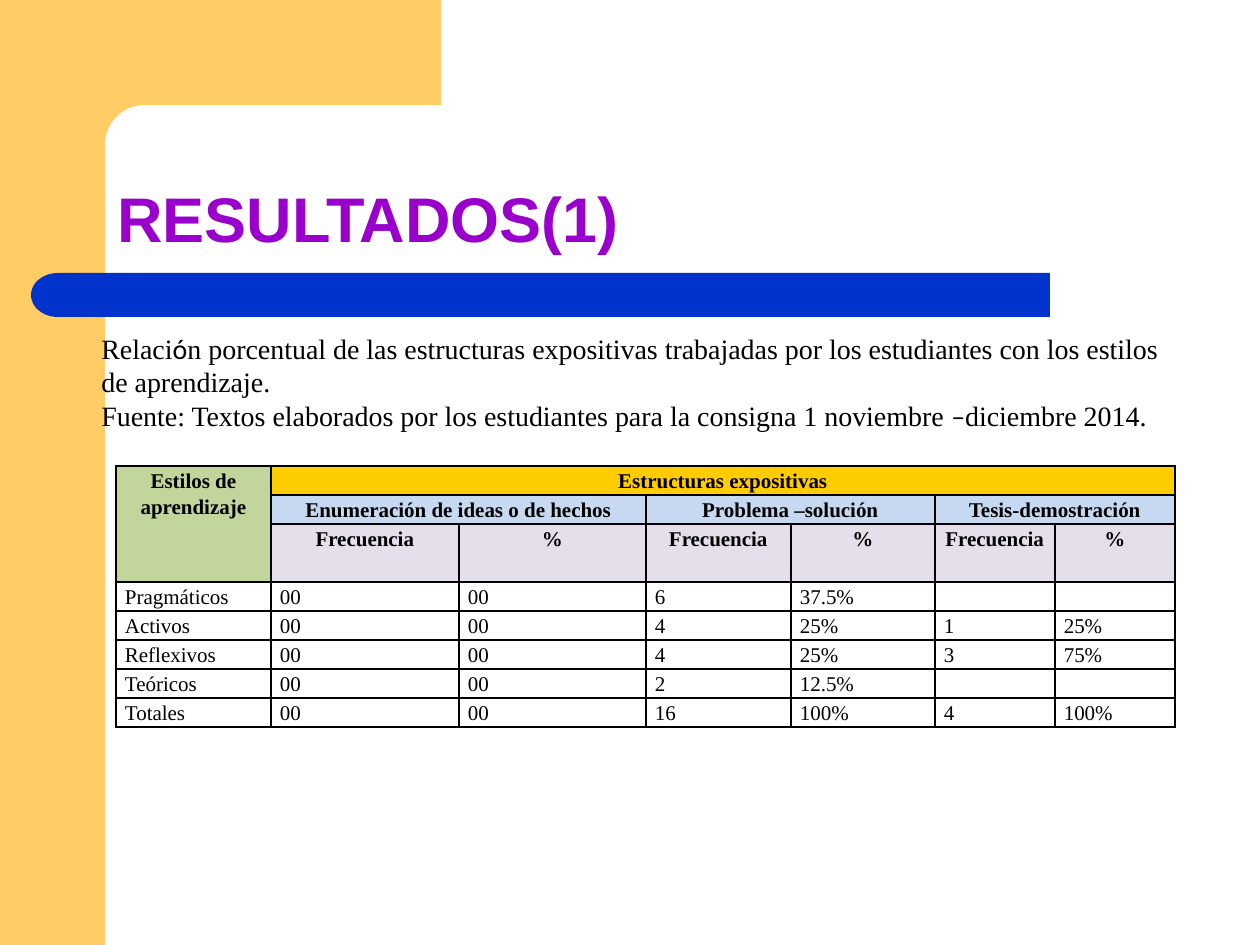
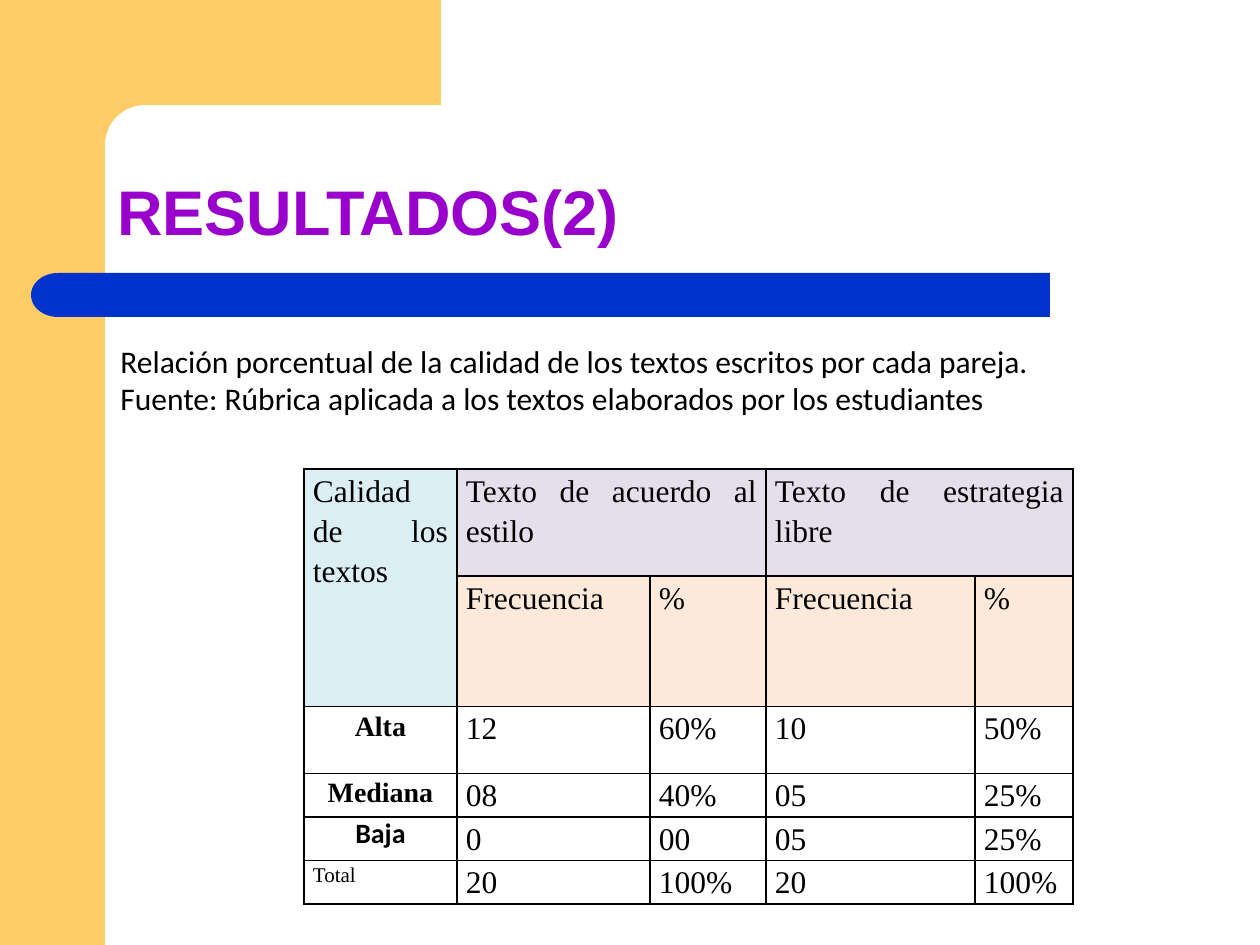
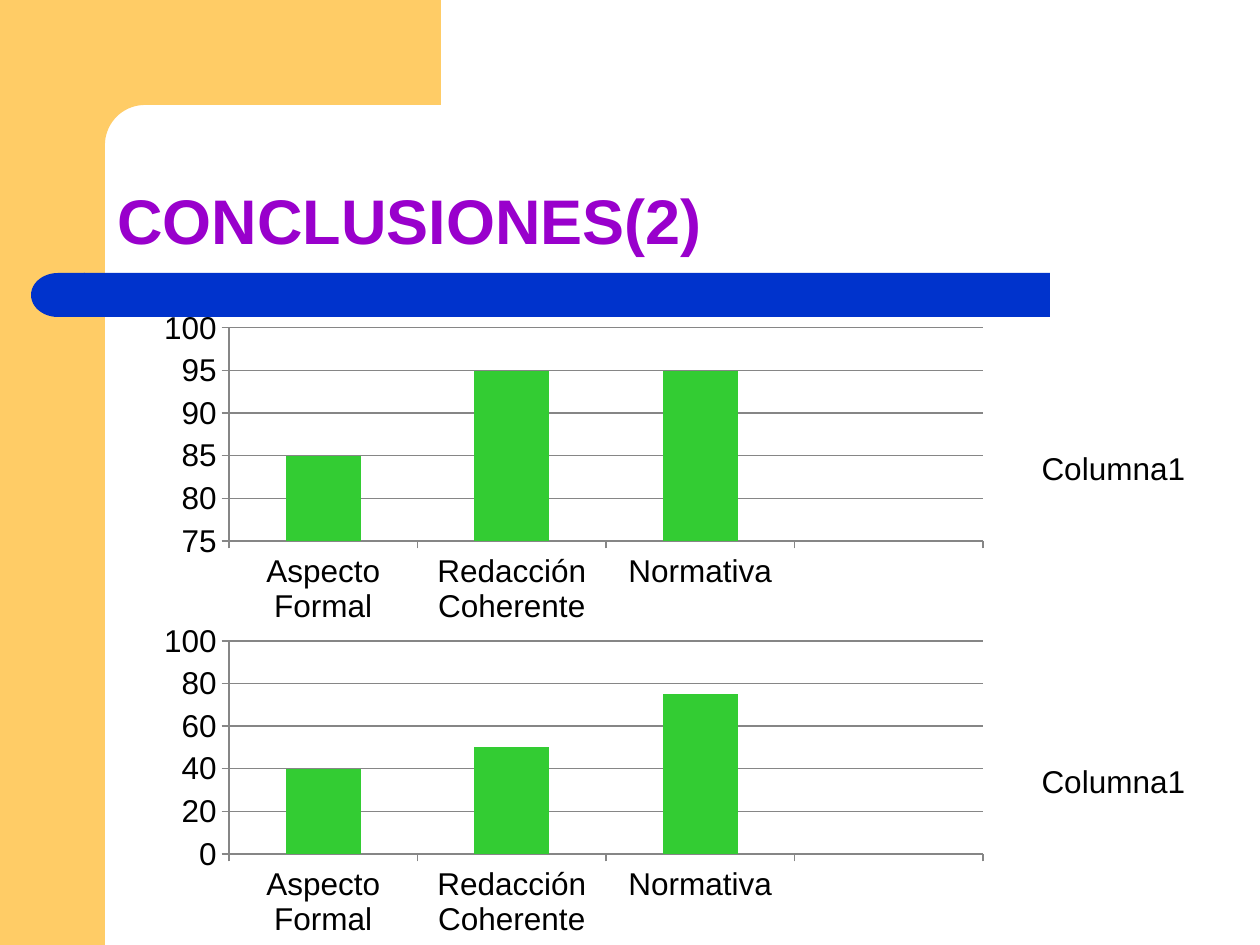
"""Builds three slides of study results: two tables and a pair of column charts."""
import math

import lxml.etree
import pptx
import pptx.chart.data
import pptx.dml.color
import pptx.enum.chart
import pptx.enum.shapes
import pptx.enum.text
import pptx.oxml.ns
import pptx.util

RGBColor = pptx.dml.color.RGBColor
ALIGN = pptx.enum.text.PP_ALIGN
ANCHOR = pptx.enum.text.MSO_ANCHOR
SHAPE = pptx.enum.shapes.MSO_SHAPE

EMU_PER_PX = 914400 / 126
SLIDE_WIDTH, SLIDE_HEIGHT = 1260, 945

SAND = RGBColor(0xFF, 0xCC, 0x66)
BLUE = RGBColor(0x00, 0x33, 0xCC)
PURPLE = RGBColor(0x99, 0x00, 0xCC)
BLACK = RGBColor(0x00, 0x00, 0x00)
WHITE = RGBColor(0xFF, 0xFF, 0xFF)
GRAY = RGBColor(0x86, 0x86, 0x86)
GREEN = RGBColor(0x33, 0xCC, 0x33)
OLIVE = RGBColor(0xC2, 0xD6, 0x9B)
GOLD = RGBColor(0xFF, 0xCC, 0x00)
SKY = RGBColor(0xC6, 0xD9, 0xF1)
LILAC = RGBColor(0xE5, 0xDF, 0xEC)
AQUA = RGBColor(0xDA, 0xEE, 0xF3)
PEACH = RGBColor(0xFD, 0xE9, 0xD9)

SERIF, SANS, TITLE_FONT = "Times New Roman", "Calibri", "Arial"


def px(length):
    return pptx.util.Emu(round(length * EMU_PER_PX))


def box(*lengths):
    return [px(length) for length in lengths]


def paint(shape, color):
    shape.shadow.inherit = False
    shape.fill.solid()
    shape.fill.fore_color.rgb = color
    shape.line.fill.background()


def style_font(font, size, name, color=BLACK, bold=False):
    font.size = pptx.util.Pt(size)
    font.name = name
    font.color.rgb = color
    font.bold = bold


def add_block(slide, kind, color, *place):
    shape = slide.shapes.add_shape(kind, *box(*place))
    paint(shape, color)
    return shape


def add_corner(slide):
    center, radius = 145, 40
    arc = [
        (center - radius * math.sin(math.radians(angle)),
         center - radius * math.cos(math.radians(angle)))
        for angle in range(0, 91, 5)
    ]
    outline = [(441, 105), *arc, (105, 161), (63, 161), (63, 0)]
    builder = slide.shapes.build_freeform(px(441), 0)
    builder.add_line_segments([(px(x), px(y)) for x, y in outline], close=True)
    paint(builder.convert_to_shape(), SAND)


def add_title(slide, text, top):
    title = slide.shapes.add_textbox(*box(105, top, 1092, 158))
    frame = title.text_frame
    frame.word_wrap = True
    frame.vertical_anchor = ANCHOR.BOTTOM
    paragraph = frame.paragraphs[0]
    paragraph.text = text
    paragraph.line_spacing = 0.9
    style_font(paragraph.font, 36, TITLE_FONT, PURPLE, True)


def add_themed_slide(presentation, title, title_top):
    slide = presentation.slides.add_slide(presentation.slide_layouts[6])
    add_block(slide, SHAPE.RECTANGLE, SAND, 0, 0, 105, SLIDE_HEIGHT)
    add_corner(slide)
    add_block(slide, SHAPE.RECTANGLE, BLUE, 84, 273, 966, 44)
    cap = add_block(slide, SHAPE.FLOWCHART_DELAY, BLUE, 31, 273, 54, 44)
    cap.element.spPr.xfrm.set("flipH", "1")
    add_title(slide, title, title_top)
    return slide


def add_caption(slide, place, size, lines):
    frame = slide.shapes.add_textbox(*box(*place)).text_frame
    frame.word_wrap = True
    frame.vertical_anchor = ANCHOR.MIDDLE
    for index, runs in enumerate(lines):
        paragraph = frame.add_paragraph() if index else frame.paragraphs[0]
        paragraph.alignment = ALIGN.JUSTIFY
        for text, font_name in runs:
            run = paragraph.add_run()
            run.text = text
            style_font(run.font, size, font_name)


def add_cell_borders(cell):
    properties = cell._tc.get_or_add_tcPr()
    for position, side in enumerate(("a:lnL", "a:lnR", "a:lnT", "a:lnB")):
        line = lxml.etree.Element(pptx.oxml.ns.qn(side), w="12700")
        fill = lxml.etree.SubElement(line, pptx.oxml.ns.qn("a:solidFill"))
        lxml.etree.SubElement(fill, pptx.oxml.ns.qn("a:srgbClr"), val=str(BLACK))
        properties.insert(position, line)


def style_cell(cell, size, font_name=SERIF, bold=False, align=ALIGN.JUSTIFY, spacing=1.15):
    paragraph = cell.text_frame.paragraphs[0]
    paragraph.alignment = align
    paragraph.line_spacing = spacing
    style_font(paragraph.font, size, font_name, BLACK, bold)
    if not paragraph.runs:
        paragraph._p.get_or_add_endParaRPr().set("sz", str(size * 100))


def add_grid(slide, left, top, widths, heights, size, headers, header_style, body):
    """Header entries are (row, column, row span, column span, text, fill)."""
    table = slide.shapes.add_table(
        len(heights), len(widths), *box(left, top, sum(widths), sum(heights))
    ).table
    table.first_row = table.horz_banding = False
    for column, width in zip(table.columns, widths):
        column.width = px(width)
    for row, height in zip(table.rows, heights):
        row.height = px(height)
    first_body_row = len(heights) - len(body)
    for row, values in enumerate(body, first_body_row):
        for column, value in enumerate(values):
            if value:
                table.cell(row, column).text = value
    for cell in table.iter_cells():
        cell.margin_left = cell.margin_right = px(9)
        cell.margin_top = cell.margin_bottom = 0
        cell.fill.background()
        add_cell_borders(cell)
        style_cell(cell, size)
    for row, column, row_span, column_span, text, color in headers:
        cell = table.cell(row, column)
        if row_span * column_span > 1:
            cell.merge(table.cell(row + row_span - 1, column + column_span - 1))
        cell.text = text
        cell.fill.solid()
        cell.fill.fore_color.rgb = color
        style_cell(cell, size, **header_style)
    return table


def chart_element(parent, tag, value):
    return lxml.etree.SubElement(parent, pptx.oxml.ns.qn(tag), val=str(value))


def place_plot(chart, **fractions):
    plot_area = chart.element.chart.plotArea
    for layout in plot_area.findall(pptx.oxml.ns.qn("c:layout")):
        plot_area.remove(layout)
    layout = lxml.etree.Element(pptx.oxml.ns.qn("c:layout"))
    manual = lxml.etree.SubElement(layout, pptx.oxml.ns.qn("c:manualLayout"))
    chart_element(manual, "c:layoutTarget", "inner")
    chart_element(manual, "c:xMode", "edge")
    chart_element(manual, "c:yMode", "edge")
    for name, fraction in fractions.items():
        chart_element(manual, f"c:{name}", fraction)
    plot_area.insert(0, layout)


def hide_legend_entries(legend, indexes):
    for position, index in enumerate(indexes, 1):
        entry = lxml.etree.Element(pptx.oxml.ns.qn("c:legendEntry"))
        chart_element(entry, "c:idx", index)
        chart_element(entry, "c:delete", 1)
        legend._element.insert(position, entry)


def add_score_chart(slide, top, scores, minimum, step):
    data = pptx.chart.data.CategoryChartData()
    data.categories = ["Aspecto Formal", "Redacción Coherente", "Normativa", ""]
    empty = [None] * 4
    data.add_series("Series 1", [*scores, None])
    data.add_series("Series 2", empty)
    data.add_series("Columna1", empty)
    chart = slide.shapes.add_chart(
        pptx.enum.chart.XL_CHART_TYPE.COLUMN_STACKED, *box(144, top, 1062, 328), data
    ).chart
    style_font(chart.font, 18, TITLE_FONT)
    chart.has_title = False
    plot = chart.plots[0]
    plot.vary_by_categories = False
    plot.gap_width = 150
    plot.overlap = 100
    for series, color in zip(plot.series, (GREEN, SAND, WHITE)):
        series.format.fill.solid()
        series.format.fill.fore_color.rgb = color
    value_axis = chart.value_axis
    value_axis.minimum_scale = minimum
    value_axis.maximum_scale = 100
    value_axis.major_unit = step
    value_axis.has_major_gridlines = True
    for item in (value_axis, chart.category_axis, value_axis.major_gridlines):
        item.format.line.color.rgb = GRAY
    chart.has_legend = True
    chart.legend.position = pptx.enum.chart.XL_LEGEND_POSITION.RIGHT
    chart.legend.include_in_layout = False
    hide_legend_entries(chart.legend, (0, 1))
    place_plot(chart, x=0.08, y=0.07, w=0.71, h=0.65)


def add_structures_slide(presentation):
    slide = add_themed_slide(presentation, "RESULTADOS(1)", 104)
    headers = [
        (0, 0, 3, 1, "Estilos de aprendizaje", OLIVE),
        (0, 1, 1, 6, "Estructuras expositivas", GOLD),
    ]
    structures = ("Enumeración de ideas o de hechos", "Problema –solución", "Tesis-demostración")
    for column, structure in zip((1, 3, 5), structures):
        headers += [
            (1, column, 1, 2, structure, SKY),
            (2, column, 1, 1, "Frecuencia", LILAC),
            (2, column + 1, 1, 1, "%", LILAC),
        ]
    body = [
        ("Pragmáticos", "00", "00", "6", "37.5%", "", ""),
        ("Activos", "00", "00", "4", "25%", "1", "25%"),
        ("Reflexivos", "00", "00", "4", "25%", "3", "75%"),
        ("Teóricos", "00", "00", "2", "12.5%", "", ""),
        ("Totales", "00", "00", "16", "100%", "4", "100%"),
    ]
    add_grid(
        slide, 116, 466, (155, 188, 187, 145, 144, 120, 120), (28, 28, 54) + (28,) * 5,
        12, headers, {"bold": True, "align": ALIGN.CENTER}, body,
    )
    add_caption(slide, (89, 324, 1082, 115), 16, [
        [
            ("Relaci", SERIF),
            ("ó", SANS),
            ("n porcentual de las estructuras expositivas trabajadas por los "
             "estudiantes con los estilos de aprendizaje.", SERIF),
        ],
        [
            ("Fuente: Textos elaborados por los estudiantes para la consigna 1 noviembre ", SERIF),
            ("–", SANS),
            ("diciembre 2014.", SERIF),
        ],
    ])


def add_quality_slide(presentation):
    slide = add_themed_slide(presentation, "RESULTADOS(2)", 97)
    headers = [(0, 0, 2, 1, "Calidad de los textos", AQUA)]
    for column, strategy in ((1, "Texto de acuerdo al estilo"), (3, "Texto de estrategia libre")):
        headers += [
            (0, column, 1, 2, strategy, LILAC),
            (1, column, 1, 1, "Frecuencia", PEACH),
            (1, column + 1, 1, 1, "%", PEACH),
        ]
    body = [
        ("Alta", "12", "60%", "10", "50%"),
        ("Mediana", "08", "40%", "05", "25%"),
        ("Baja", "0", "00", "05", "25%"),
        ("Total", "20", "100%", "20", "100%"),
    ]
    table = add_grid(
        slide, 304, 469, (153, 193, 116, 209, 98), (107, 120, 67, 40, 40, 40),
        18, headers, {}, body,
    )
    for row, font_name, spacing in ((2, SERIF, 1.15), (3, SERIF, 1.15), (4, SANS, 1)):
        style_cell(table.cell(row, 0), 16, font_name, True, ALIGN.CENTER, spacing)
    style_cell(table.cell(5, 0), 12)
    add_caption(slide, (108, 324, 1004, 111), 18, [
        [("Relación porcentual de la calidad de los textos escritos por cada pareja.", SANS)],
        [("Fuente: Rúbrica aplicada a los textos elaborados por los estudiantes", SANS)],
    ])


def add_conclusions_slide(presentation):
    slide = add_themed_slide(presentation, "CONCLUSIONES(2)", 106)
    add_score_chart(slide, 305, (85, 95, 95), 75, 5)
    add_score_chart(slide, 618, (40, 50, 75), 0, 20)


def main():
    presentation = pptx.Presentation()
    presentation.slide_width = px(SLIDE_WIDTH)
    presentation.slide_height = px(SLIDE_HEIGHT)
    add_structures_slide(presentation)
    add_quality_slide(presentation)
    add_conclusions_slide(presentation)
    presentation.save("out.pptx")


if __name__ == "__main__":
    main()
